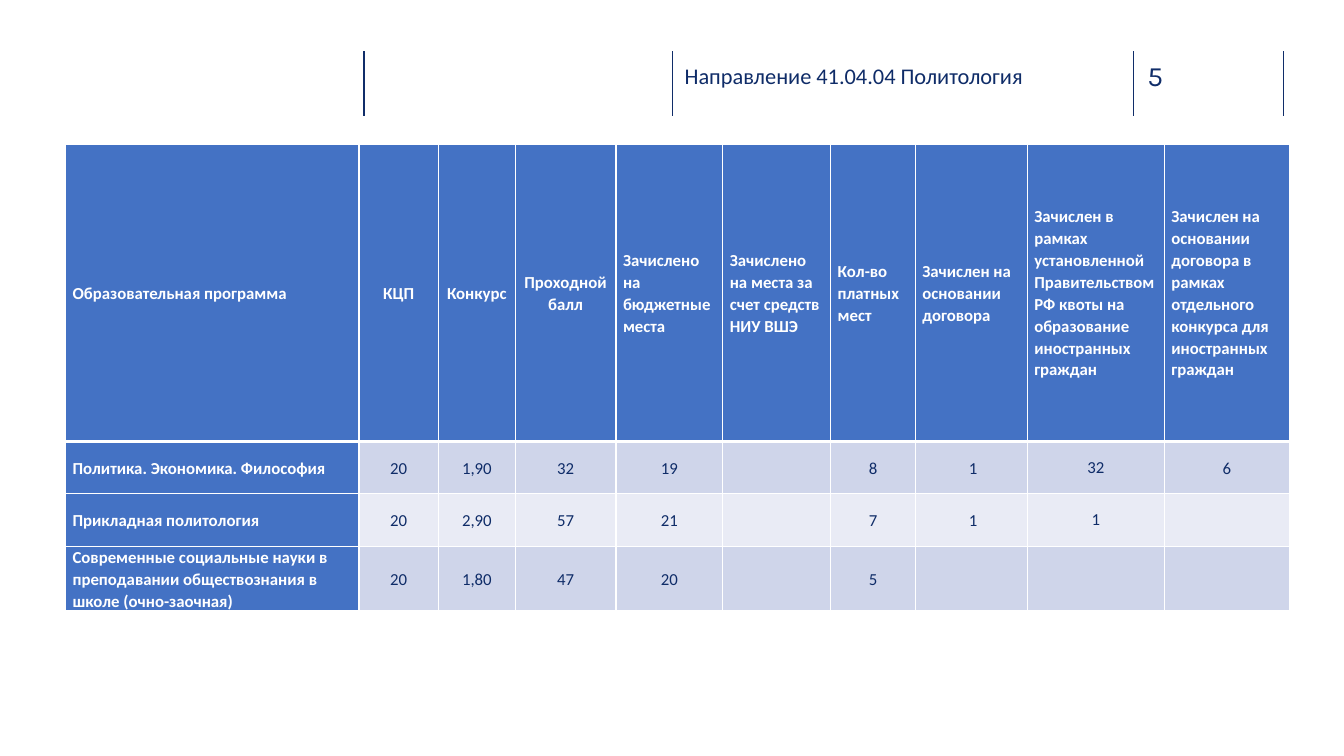
from lxml.etree import SubElement
from pptx import Presentation
from pptx.dml.color import RGBColor
from pptx.enum.shapes import MSO_CONNECTOR
from pptx.enum.text import MSO_ANCHOR, PP_ALIGN
from pptx.oxml import parse_xml
from pptx.oxml.ns import nsdecls, qn
from pptx.util import Inches, Pt

NAVY = RGBColor(0x10, 0x2D, 0x69)
INK = RGBColor(0x0F, 0x2C, 0x68)
WHITE = RGBColor(0xFF, 0xFF, 0xFF)
BLUE = RGBColor(0x44, 0x72, 0xC4)
BANDS = [RGBColor(0xCF, 0xD5, 0xEA), RGBColor(0xE9, 0xEB, 0xF5)]

DIVIDERS = [3.61, 6.67, 11.24, 12.73]
COLUMN_WIDTHS = [2.91, 0.79, 0.76, 1, 1.06, 1.07, 0.84, 1.11, 1.36, 1.24]
ROW_HEIGHTS = [2.95, 0.52, 0.52, 0.52]
CENTRED_HEADINGS = range(1, 4)
QUOTA_COLUMN = 8
LINE_SPACING = 1.07

ADMISSIONS = [
    ["Образовательная программа", "КЦП", "Конкурс", "Проходной балл",
     "Зачислено на бюджетные места",
     "Зачислено на места за счет средств НИУ ВШЭ",
     "Кол-во платных мест", "Зачислен на основании договора",
     "Зачислен в рамках установленной Правительством РФ квоты "
     "на образование иностранных граждан",
     "Зачислен на основании договора в рамках отдельного конкурса "
     "для иностранных граждан"],
    ["Политика. Экономика. Философия",
     "20", "1,90", "32", "19", "", "8", " 1", "32", "6"],
    ["Прикладная политология",
     "20", "2,90", "57", "21", "", "7", " 1", "1", ""],
    ["Современные социальные науки в преподавании обществознания "
     "в школе (очно-заочная)",
     "20", "1,80", "47", "20", "", "5", "", "", ""],
]


def style_paragraph(paragraph, font_name, size, color, bold=False):
    """Set the font of a whole paragraph."""
    font = paragraph.font
    font.name, font.size, font.bold = font_name, Pt(size), bold
    font.color.rgb = color


def add_divider(slide, x):
    """Draw one thin vertical rule of the page header."""
    divider = slide.shapes.add_connector(
        MSO_CONNECTOR.STRAIGHT, Inches(x), Inches(0.51), Inches(x), Inches(1.15))
    divider.line.color.rgb = NAVY
    divider.line.width = Pt(1)
    SubElement(divider.element.spPr, qn("a:effectLst"))


def add_label(slide, text, position, font_name, size, color):
    """Add a header text without insets and return its paragraph."""
    frame = slide.shapes.add_textbox(*map(Inches, position)).text_frame
    frame.word_wrap = True
    frame.margin_left = frame.margin_right = 0
    frame.margin_top = frame.margin_bottom = 0
    paragraph = frame.paragraphs[0]
    paragraph.text = text
    style_paragraph(paragraph, font_name, size, color)
    return paragraph


def add_borders(cell, bottom_width):
    """Give a cell white borders, with its own width at the bottom."""
    properties = cell._tc.get_or_add_tcPr()
    for side, width in zip("LRTB", (1, 1, 1, bottom_width)):
        properties.append(parse_xml(
            f'<a:ln{side} {nsdecls("a")} w="{Pt(width)}"><a:solidFill>'
            f'<a:srgbClr val="{WHITE}"/></a:solidFill></a:ln{side}>'))


def fill_cell(cell, text, row, column):
    """Write and style one cell according to its place in the table."""
    heading = row == 0 or column == 0
    centred = column in CENTRED_HEADINGS if row == 0 else column > 0
    add_borders(cell, 3 if row == 0 else 1)
    cell.fill.solid()
    cell.fill.fore_color.rgb = BLUE if heading else BANDS[(row - 1) % 2]
    cell.vertical_anchor = MSO_ANCHOR.MIDDLE
    cell.margin_left = cell.margin_right = Inches(0.07)
    cell.margin_top = cell.margin_bottom = 0
    paragraph = cell.text_frame.paragraphs[0]
    paragraph.text = text
    paragraph.alignment = PP_ALIGN.CENTER if centred else PP_ALIGN.LEFT
    if row == 0 or column != QUOTA_COLUMN:
        paragraph.line_spacing = LINE_SPACING
    style_paragraph(paragraph, "Calibri", 12, WHITE if heading else INK, heading)


def add_admissions_table(slide):
    """Add the table of admission results by programme."""
    table = slide.shapes.add_table(
        len(ROW_HEIGHTS), len(COLUMN_WIDTHS), Inches(0.65), Inches(1.43),
        Inches(sum(COLUMN_WIDTHS)), Inches(sum(ROW_HEIGHTS))).table
    table.first_col = True
    for column, width in zip(table.columns, COLUMN_WIDTHS):
        column.width = Inches(width)
    for row, height in zip(table.rows, ROW_HEIGHTS):
        row.height = Inches(height)
    for row, texts in enumerate(ADMISSIONS):
        for column, text in enumerate(texts):
            fill_cell(table.cell(row, column), text, row, column)


def main():
    """Build the slide and save it."""
    deck = Presentation()
    deck.slide_width, deck.slide_height = Inches(13.33), Inches(7.5)
    slide = deck.slides.add_slide(deck.slide_layouts[6])
    for x in DIVIDERS:
        add_divider(slide, x)
    add_label(slide, "5", (11.38, 0.58, 0.73, 0.34), "Karla", 20, NAVY)
    direction = add_label(slide, "Направление 41.04.04 Политология",
                          (6.79, 0.6, 4.12, 0.45), "Calibri", 16, INK)
    direction.line_spacing = LINE_SPACING
    add_admissions_table(slide)
    deck.save("out.pptx")


if __name__ == "__main__":
    main()
